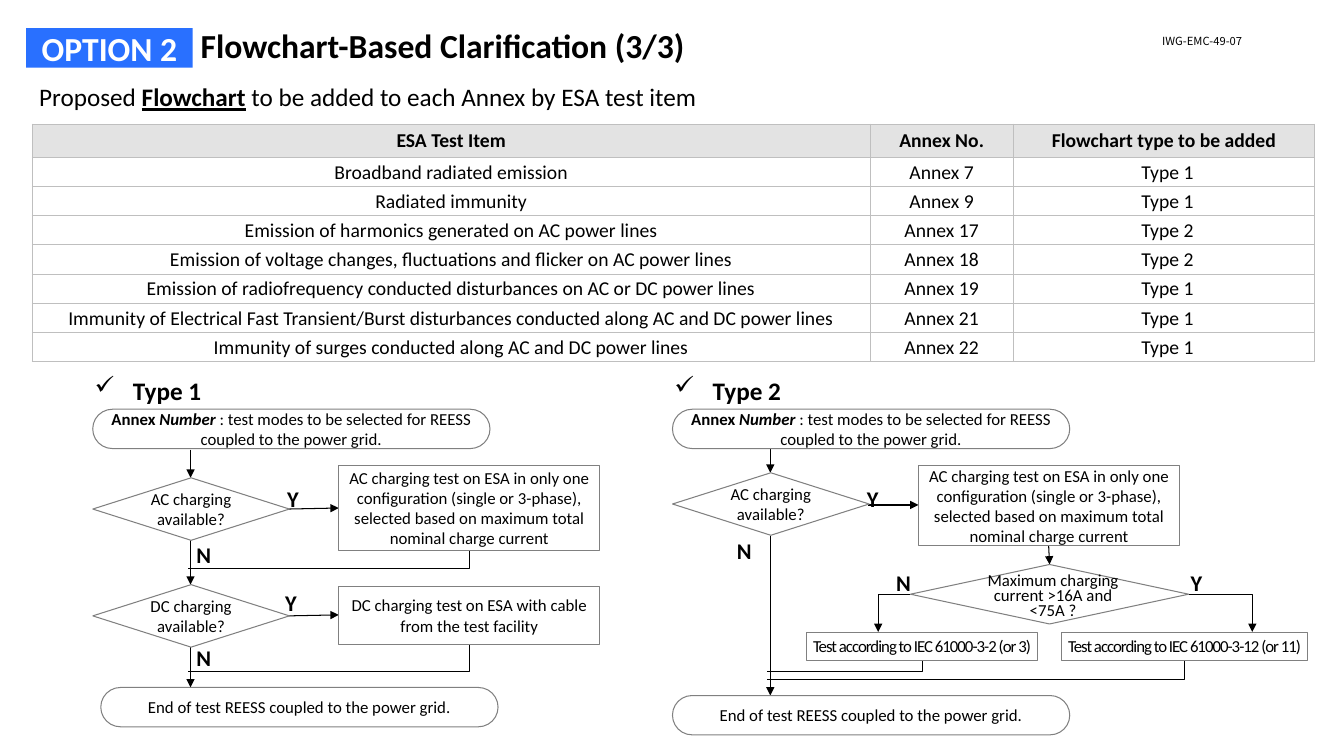
from dataclasses import dataclass

from lxml import etree
from pptx import Presentation, util as u
from pptx.dml.color import RGBColor
from pptx.enum import shapes, text
from pptx.oxml import ns

Box = tuple[float, float, float, float]
Point = tuple[float, float]
SHAPE, ANCHOR, ALIGN = shapes.MSO_SHAPE, text.MSO_ANCHOR, text.PP_ALIGN


@dataclass(frozen=True)
class Theme:
    black: str = "000000"
    white: str = "FFFFFF"
    accent: str = "2970FF"
    outline: str = "808080"
    header: str = "E3E3E3"
    grid: str = "BFBFBF"
    font: str = "Calibri"
    code_font: str = "Noto Sans CJK KR"
    title: float = 24
    heading: float = 18
    answer: float = 16
    table: float = 14
    step: float = 12
    code: float = 8
    line: float = 0.75


@dataclass(frozen=True)
class Run:
    words: str
    bold: bool = False
    italic: bool = False
    underline: bool = False


@dataclass(frozen=True)
class Step:
    kind: shapes.MSO_SHAPE
    box: Box
    words: str | tuple[Run, ...] = ""
    spacing: float = 0


@dataclass(frozen=True)
class Link:
    """Straight when turn is None, else an L rotated by that many degrees."""
    start: Point
    end: Point
    arrow: bool = True
    turn: int | None = None


@dataclass(frozen=True)
class Answer:
    letter: str
    box: Box


T = Theme()
FLAT = (0, 0, 0, 0)
PADDED = (0.1, 0.05, 0.1, 0.05)
START = (Run("Annex ", bold=True), Run("Number ", bold=True, italic=True),
         Run(": test modes to be selected for REESS coupled to the power grid."))
END = "End of test REESS coupled to the power grid."
AC_QUESTION = "AC charging available?"
AC_TEST = ("AC charging test on ESA in only one configuration (single or 3-phase), "
           "selected based on maximum total nominal charge current")

TEST_ITEMS = [
    ("ESA Test Item", "Annex No.", "Flowchart type to be added"),
    ("Broadband radiated emission", "Annex 7", "Type 1"),
    ("Radiated immunity", "Annex 9", "Type 1"),
    ("Emission of harmonics generated on AC power lines", "Annex 17", "Type 2"),
    ("Emission of voltage changes, fluctuations and flicker on AC power lines", "Annex 18", "Type 2"),
    ("Emission of radiofrequency conducted disturbances on AC or DC power lines", "Annex 19", "Type 1"),
    ("Immunity of Electrical Fast Transient/Burst disturbances conducted along AC and DC power lines",
     "Annex 21", "Type 1"),
    ("Immunity of surges conducted along AC and DC power lines", "Annex 22", "Type 1"),
]

LINKS = [
    Link((1.89, 4.46), (1.89, 4.74)), Link((1.89, 5.36), (1.89, 5.8)),
    Link((1.89, 6.42), (1.89, 6.82)),
    Link((2.86, 5.05), (3.36, 5.04)), Link((2.86, 6.11), (3.36, 6.1)),
    Link((4.66, 5.46), (1.86, 5.64), arrow=False, turn=90),
    Link((4.66, 6.38), (1.86, 6.66), arrow=False, turn=90),
    Link((7.64, 4.41), (7.64, 4.69)), Link((7.64, 5.32), (7.64, 6.9)),
    Link((8.61, 5.01), (9.11, 5.01)), Link((10.4, 5.4), (10.41, 5.6)),
    Link((9.03, 5.9), (8.71, 6.27), turn=180),
    Link((11.79, 5.9), (12.42, 6.27), turn=0),
    Link((9.15, 6.55), (7.61, 6.66), arrow=False, turn=90),
    Link((11.75, 6.55), (7.61, 6.74), arrow=False, turn=90),
]

STEPS = [
    Step(SHAPE.ROUNDED_RECTANGLE, (0.92, 4.06, 3.94, 0.39), START),
    Step(SHAPE.DIAMOND, (0.92, 4.74, 1.95, 0.62), AC_QUESTION),
    Step(SHAPE.RECTANGLE, (3.36, 4.62, 2.59, 0.84), AC_TEST),
    Step(SHAPE.DIAMOND, (0.92, 5.8, 1.95, 0.62), "DC charging available?"),
    Step(SHAPE.RECTANGLE, (3.36, 5.82, 2.59, 0.57),
         "DC charging test on ESA with cable from the test facility"),
    Step(SHAPE.ROUNDED_RECTANGLE, (1, 6.82, 3.94, 0.39), END),
    Step(SHAPE.ROUNDED_RECTANGLE, (6.67, 4.06, 3.94, 0.39), START),
    Step(SHAPE.DIAMOND, (6.67, 4.69, 1.95, 0.62), AC_QUESTION),
    Step(SHAPE.RECTANGLE, (9.11, 4.62, 2.59, 0.79), AC_TEST),
    Step(SHAPE.DIAMOND, (9.03, 5.6, 2.76, 0.59)),
    Step(SHAPE.RECTANGLE, (8, 6.27, 2.29, 0.28), "Test according to IEC 61000-3-2 (or 3)", -0.7),
    Step(SHAPE.RECTANGLE, (10.53, 6.27, 2.44, 0.28), "Test according to IEC 61000-3-12 (or 11)", -0.7),
    Step(SHAPE.ROUNDED_RECTANGLE, (6.67, 6.9, 3.94, 0.39), END),
]

ANSWERS = [
    Answer("Y", (2.75, 4.76, 0.36, 0.35)), Answer("N", (1.85, 5.32, 0.33, 0.35)),
    Answer("Y", (2.73, 5.8, 0.3, 0.35)), Answer("N", (1.85, 6.34, 0.33, 0.35)),
    Answer("Y", (8.5, 4.76, 0.36, 0.35)), Answer("N", (7.21, 5.28, 0.41, 0.44)),
    Answer("N", (8.79, 5.6, 0.41, 0.4)), Answer("Y", (11.71, 5.6, 0.37, 0.36)),
]


def inches(values):
    return [u.Inches(value) for value in values]


def write(frame, words, *, size=T.step, color=T.black, font=T.font, bold=False, align=ALIGN.LEFT,
          anchor=ANCHOR.TOP, insets=PADDED, wrap=True, grow=False, spacing=0, before=0,
          leading=None, bullet=""):
    frame.margin_left, frame.margin_top, frame.margin_right, frame.margin_bottom = inches(insets)
    frame.vertical_anchor, frame.word_wrap = anchor, wrap
    if grow:
        frame.auto_size = text.MSO_AUTO_SIZE.SHAPE_TO_FIT_TEXT
    paragraph = frame.paragraphs[0]
    paragraph.alignment, paragraph.space_before = align, u.Pt(before)
    if leading:
        paragraph.line_spacing = u.Pt(leading)
    if bullet:
        properties = paragraph._p.get_or_add_pPr()
        properties.set("marL", str(u.Inches(0.38)))
        properties.set("indent", str(u.Inches(-0.38)))
        etree.SubElement(properties, ns.qn("a:buChar"), char=bullet)
    for part in (Run(words, bold),) if isinstance(words, str) else words:
        run = paragraph.add_run()
        run.text = part.words
        run.font.name, run.font.size = font, u.Pt(size)
        run.font.bold, run.font.italic, run.font.underline = part.bold, part.italic, part.underline
        run.font.color.rgb = RGBColor.from_string(color)
        if spacing:
            run._r.get_or_add_rPr().set("spc", str(round(spacing * 100)))


def add_text(slide, box: Box, words, **style) -> None:
    write(slide.shapes.add_textbox(*inches(box)).text_frame, words, **style)


def add_block(slide, kind, box: Box, fill: str, outline: str = ""):
    block = slide.shapes.add_shape(kind, *inches(box))
    block.shadow.inherit = False
    block.fill.solid()
    block.fill.fore_color.rgb = RGBColor.from_string(fill)
    if outline:
        block.line.color.rgb = RGBColor.from_string(outline)
        block.line.width = u.Pt(T.line)
    else:
        block.line.fill.background()
    return block


def add_step(slide, step: Step) -> None:
    block = add_block(slide, step.kind, step.box, T.white, T.outline)
    rounded = step.kind == SHAPE.ROUNDED_RECTANGLE
    if rounded:
        block.adjustments[0] = 0.5
    if step.words:
        write(block.text_frame, step.words, align=ALIGN.CENTER, anchor=ANCHOR.MIDDLE,
              insets=PADDED if rounded else FLAT, spacing=step.spacing)


def unturned(link: Link) -> tuple[Point, Point]:
    """Ends of the link before its rotation about the midpoint."""
    (x1, y1), (x2, y2) = link.start, link.end
    if link.turn == 180:
        return link.end, link.start
    if link.turn == 90:
        mid_x, mid_y, dx, dy = (x1 + x2) / 2, (y1 + y2) / 2, (x1 - x2) / 2, (y2 - y1) / 2
        return (mid_x - dy, mid_y - dx), (mid_x + dy, mid_y + dx)
    return link.start, link.end


def add_link(slide, link: Link) -> None:
    kind = shapes.MSO_CONNECTOR.STRAIGHT if link.turn is None else shapes.MSO_CONNECTOR.ELBOW
    start, end = unturned(link)
    connector = slide.shapes.add_connector(kind, *inches(start + end))
    connector.line.color.rgb = RGBColor.from_string(T.black)
    connector.line.width = u.Pt(T.line)
    properties = connector._element.spPr
    geometry = properties.find(ns.qn("a:prstGeom"))
    if link.turn:
        geometry.set("prst", "bentConnector2")
        properties.find(ns.qn("a:xfrm")).set("rot", str(link.turn * 60000))
    elif link.turn == 0:
        guides = geometry.find(ns.qn("a:avLst"))
        etree.SubElement(guides, ns.qn("a:gd"), name="adj1", fmla="val 100200")
    if link.arrow:
        etree.SubElement(properties.find(ns.qn("a:ln")), ns.qn("a:tailEnd"), type="triangle")
    etree.SubElement(properties, ns.qn("a:effectLst"))


def style_cell(cell, fill: str) -> None:
    cell.fill.solid()
    cell.fill.fore_color.rgb = RGBColor.from_string(fill)
    properties = cell._tc.get_or_add_tcPr()
    for position, side in enumerate(("lnL", "lnR", "lnT", "lnB")):
        border = etree.Element(ns.qn(f"a:{side}"), w=str(u.Pt(T.line)))
        paint = etree.SubElement(border, ns.qn("a:solidFill"))
        etree.SubElement(paint, ns.qn("a:srgbClr"), val=T.grid)
        properties.insert(position, border)


def add_test_items(slide) -> None:
    table = slide.shapes.add_table(len(TEST_ITEMS), 3, *inches((0.32, 1.23, 12.72, 2.36))).table
    for column, width in zip(table.columns, (8.31, 1.42, 2.99)):
        column.width = u.Inches(width)
    for r, row in enumerate(TEST_ITEMS):
        table.rows[r].height = u.Inches(0.29 if r else 0.33)
        for c, words in enumerate(row):
            cell = table.cell(r, c)
            style_cell(cell, T.white if r else T.header)
            write(cell.text_frame, words, size=T.table, bold=r == 0, align=ALIGN.CENTER)
            cell.vertical_anchor = ANCHOR.MIDDLE
            insets = (0.08 if c == 2 else 0.01, 0.01, 0.01, 0) if r else FLAT
            cell.margin_left, cell.margin_top, cell.margin_right, cell.margin_bottom = inches(insets)


def main() -> None:
    deck = Presentation()
    deck.slide_width, deck.slide_height = inches((13.33, 7.5))
    slide = deck.slides.add_slide(deck.slide_layouts[6])
    add_text(slide, (0.38, 0.2, 10.65, 0.47), "Flowchart-Based Clarification (3/3)", size=T.title,
             bold=True, before=4.8, insets=(1.61, 0.05, 0.1, 0.05))
    option = add_block(slide, SHAPE.RECTANGLE, (0.26, 0.28, 1.65, 0.39), T.accent)
    write(option.text_frame, "OPTION 2", size=T.title, color=T.white, bold=True,
          align=ALIGN.CENTER, anchor=ANCHOR.MIDDLE, wrap=False)
    add_text(slide, (10.53, 0.29, 1.89, 0.24), "IWG-EMC-49-07", size=T.code, font=T.code_font,
             align=ALIGN.RIGHT, grow=True)
    add_text(slide, (0.29, 0.76, 12.76, 0.4),
             (Run("Proposed "), Run("Flowchart", bold=True, underline=True),
              Run(" to be added to each Annex by ESA test item")), size=T.heading, grow=True)
    add_test_items(slide)
    for left, heading in ((0.84, "Type 1"), (6.59, "Type 2")):
        add_text(slide, (left, 3.67, 1.81, 0.4), heading, size=T.heading, bold=True, grow=True, bullet="✓")
    for link in LINKS:
        add_link(slide, link)
    for step in STEPS:
        add_step(slide, step)
    add_text(slide, (9.66, 5.64, 1.57, 0.57), "Maximum charging current >16A and <75A ?",
             align=ALIGN.CENTER, anchor=ANCHOR.MIDDLE, leading=11, grow=True)
    for answer in ANSWERS:
        add_text(slide, answer.box, answer.letter, size=T.answer, bold=True, wrap=False, grow=True)
    deck.save("out.pptx")


if __name__ == "__main__":
    main()
